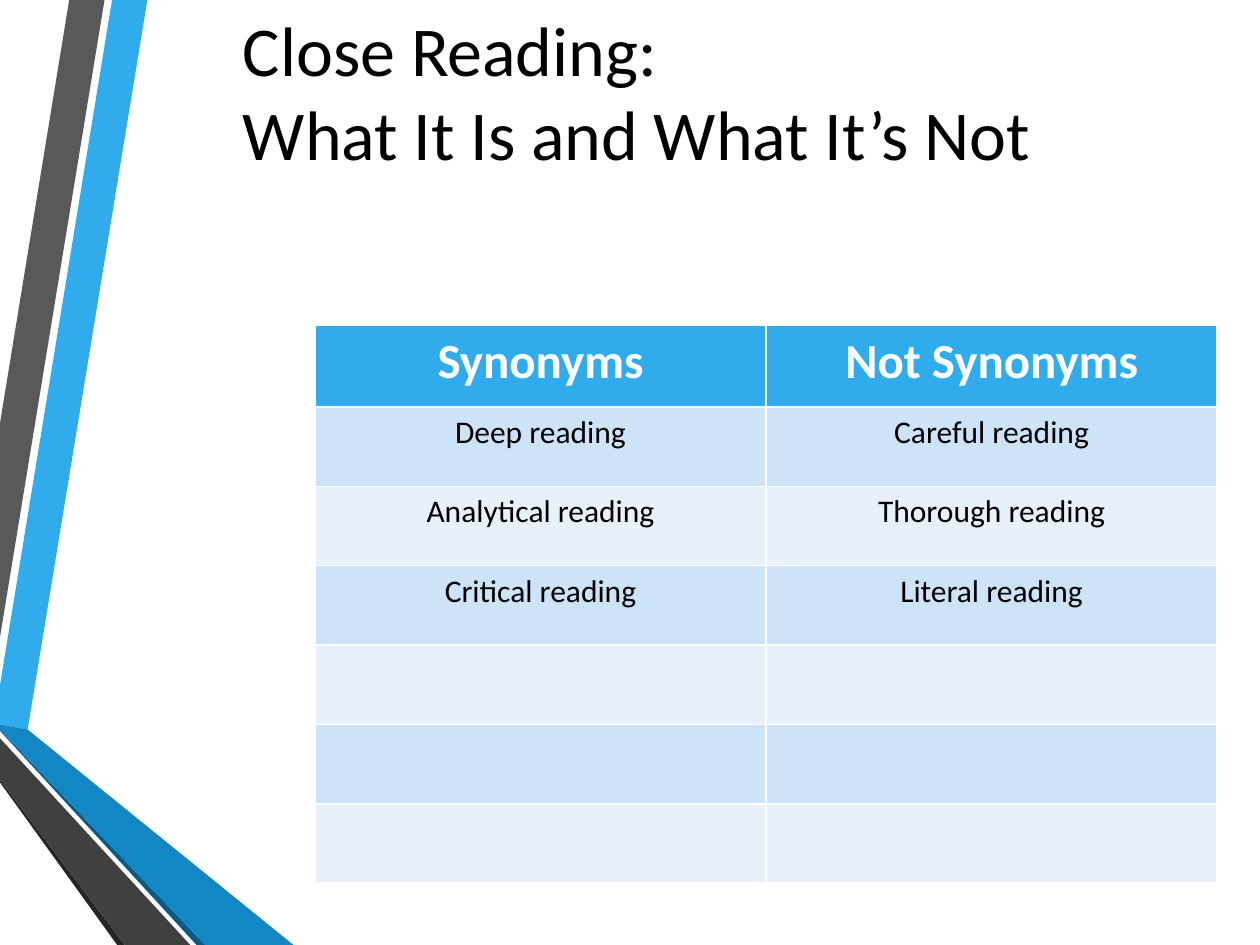
from lxml import etree
from pptx import Presentation
from pptx.dml.color import RGBColor
from pptx.enum.text import PP_ALIGN
from pptx.oxml.ns import qn
from pptx.util import Inches, Pt

LEFT, CENTER = PP_ALIGN.LEFT, PP_ALIGN.CENTER
GRID_COLUMNS, GRID_ROWS = 10, 7.5

WHITE, BLACK, BLUE = "FFFFFF", "000000", "30ACEC"
BANDS = ["CDE3F8", "E8F1FB"]

TITLE = {"size": Pt(40), "bold": False, "color": BLACK, "align": LEFT}
HEADER = {"size": Pt(28), "bold": True, "color": WHITE, "align": CENTER}
BODY = {"size": Pt(18), "bold": False, "color": BLACK, "align": CENTER}

RIBBONS = [
    (BLUE, [(0, 5.44), (0, 5.75), (0.22, 5.79), (1.17, 0), (0.89, 0)]),
    ("595959", [(0.83, 0), (0.55, 0), (0, 3.36), (0, 5.06)]),
    ("262626", [(0, 6.19), (0, 6.21), (0.93, 7.5), (0.99, 7.5)]),
    ("0C5A82", [(0, 5.79), (0, 5.8), (1.56, 7.5), (1.63, 7.5)]),
    ("1287C3", [(0, 5.79), (1.63, 7.5), (2.33, 7.5), (0.22, 5.79), (0, 5.75)]),
    ("404040", [(0, 6.19), (0.99, 7.5), (1.51, 7.5), (0, 5.86)]),
]

READINGS = [
    ("Synonyms", "Not Synonyms"),
    ("Deep reading", "Careful reading"),
    ("Analytical reading", "Thorough reading"),
    ("Critical reading", "Literal reading"),
    ("", ""),
    ("", ""),
    ("", ""),
]


def rgb(value):
    return RGBColor.from_string(value)


class SlideBuilder:
    font = "Calibri"

    def __init__(self, prs):
        self.s = prs.slides.add_slide(prs.slide_layouts[6])
        self.column = prs.slide_width / GRID_COLUMNS
        self.row = prs.slide_height / GRID_ROWS

    def place(self, x, y):
        return round(x * self.column), round(y * self.row)

    def add_text(self, p, text, style):
        p.alignment = style["align"]
        r = p.add_run()
        r.text = text
        for name, value in {"name": self.font, "size": style["size"], "bold": style["bold"]}.items():
            setattr(r.font, name, value)
        r.font.color.rgb = rgb(style["color"])

    def ribbon(self, color, points):
        start, *rest = [self.place(*point) for point in points]
        outline = self.s.shapes.build_freeform(*start)
        outline.add_line_segments(rest, close=True)
        sp = outline.convert_to_shape()
        sp.shadow.inherit = False
        sp.fill.solid()
        sp.fill.fore_color.rgb = rgb(color)
        sp.line.fill.background()

    def text(self, x, y, width, height, lines, style):
        tf = self.s.shapes.add_textbox(*self.place(x, y), *self.place(width, height)).text_frame
        tf.word_wrap = True
        for i, line in enumerate(lines):
            p = tf.add_paragraph() if i else tf.paragraphs[0]
            self.add_text(p, line, style)

    def border(self, cell, color):
        tcPr = cell._tc.get_or_add_tcPr()
        for side in ("lnL", "lnR", "lnT", "lnB"):
            line = etree.SubElement(tcPr, qn(f"a:{side}"), w=str(Pt(1)))
            fill = etree.SubElement(line, qn("a:solidFill"))
            etree.SubElement(fill, qn("a:srgbClr"), val=color)

    def table(self, x, y, width, heights, rows):
        frame = self.s.shapes.add_table(
            len(rows), len(rows[0]), *self.place(x, y), *self.place(width, sum(heights))
        )
        for i, (row, height) in enumerate(zip(rows, heights)):
            frame.table.rows[i].height = self.place(0, height)[1]
            for j, text in enumerate(row):
                cell = frame.table.cell(i, j)
                self.border(cell, WHITE)
                cell.fill.solid()
                cell.fill.fore_color.rgb = rgb(BANDS[(i - 1) % 2] if i else BLUE)
                if text:
                    self.add_text(cell.text_frame.paragraphs[0], text, BODY if i else HEADER)


def main():
    prs = Presentation()
    prs.slide_width, prs.slide_height = Inches(10), Inches(7.5)
    slide = SlideBuilder(prs)
    for color, points in RIBBONS:
        slide.ribbon(color, points)
    slide.table(2.5, 2.58, 7.16, [0.65] + [0.63] * 6, READINGS)
    slide.text(1.83, 0, 8.75, 1.45, ["Close Reading:", "What It Is and What It’s Not"], TITLE)
    prs.save("out.pptx")


if __name__ == "__main__":
    main()
